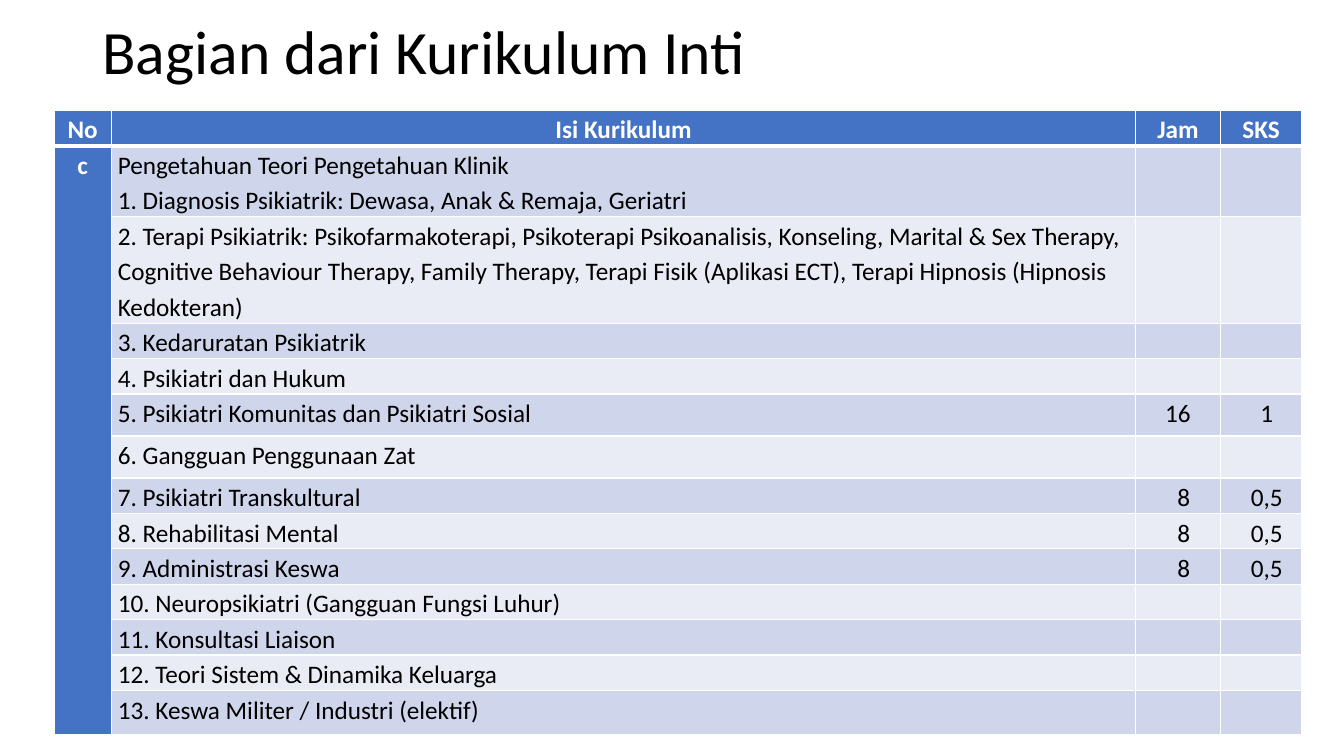
from lxml.etree import SubElement
from pptx import Presentation
from pptx.dml.color import RGBColor
from pptx.enum.text import MSO_ANCHOR, MSO_AUTO_SIZE, PP_ALIGN as Align
from pptx.oxml.ns import qn
from pptx.util import Cm, Pt

TITLE = "Bagian dari Kurikulum Inti"
HEADERS = ["No", "Isi Kurikulum", "Jam", "SKS"]
SECTION = "c"
# Topic, hours, credits, row height in cm
TOPICS = [
    ("Pengetahuan Teori Pengetahuan Klinik\n"
     "1. Diagnosis Psikiatrik: Dewasa, Anak & Remaja, Geriatri", "", "", 1.79),
    ("2. Terapi Psikiatrik: Psikofarmakoterapi, Psikoterapi Psikoanalisis, "
     "Konseling, Marital & Sex Therapy, Cognitive Behaviour Therapy, "
     "Family Therapy, Terapi Fisik (Aplikasi ECT), Terapi Hipnosis "
     "(Hipnosis Kedokteran)", "", "", 2.68),
    ("3. Kedaruratan Psikiatrik", "", "", 0.89),
    ("4. Psikiatri dan Hukum", "", "", 0.89),
    ("5. Psikiatri Komunitas dan Psikiatri Sosial", "16", "1", 1.06),
    ("6. Gangguan Penggunaan Zat", "", "", 1.06),
    ("7. Psikiatri Transkultural", "8", "0,5", 0.89),
    ("8. Rehabilitasi Mental", "8", "0,5", 0.89),
    ("9. Administrasi Keswa", "8", "0,5", 0.89),
    ("10. Neuropsikiatri (Gangguan Fungsi Luhur)", "", "", 0.89),
    ("11. Konsultasi Liaison", "", "", 0.89),
    ("12. Teori Sistem & Dinamika Keluarga", "", "", 0.89),
    ("13. Keswa Militer / Industri (elektif)", "", "", 1.11),
]
COLUMN_WIDTHS = [1.45, 25.81, 2.13, 2.06]
HEADER_HEIGHT = 0.89
FONT = "Calibri"
BLUE, DARK_BAND, LIGHT_BAND = "4472C4", "CFD5EA", "E9EBF5"
WHITE, BLACK = "FFFFFF", "000000"
INSET, NUMBER_INDENT = 0.16, 0.29


def color(value):
    return RGBColor.from_string(value)


def write(frame, text, size=18, ink=BLACK, bold=False, align=Align.LEFT,
          spacing=1.15):
    for index, line in enumerate(text.split("\n")):
        para = frame.paragraphs[0] if index == 0 else frame.add_paragraph()
        para.alignment = align
        para.line_spacing = spacing
        span = para.add_run()
        span.text = line
        span.font.name = FONT
        span.font.size = Pt(size)
        span.font.bold = bold
        span.font.color.rgb = color(ink)


def draw_borders(cell, top=1, bottom=1):
    properties = cell._tc.get_or_add_tcPr()
    widths = {"a:lnL": 1, "a:lnR": 1, "a:lnT": top, "a:lnB": bottom}
    for tag, width in widths.items():
        line = SubElement(properties, qn(tag), w=str(Pt(width)))
        fill = SubElement(line, qn("a:solidFill"))
        SubElement(fill, qn("a:srgbClr"), val=WHITE)


def style_cell(cell, fill, text="", indent=0, top=1, bottom=1, **text_format):
    draw_borders(cell, top, bottom)
    cell.fill.solid()
    cell.fill.fore_color.rgb = color(fill)
    cell.margin_left = Cm(INSET + indent)
    cell.margin_right = Cm(INSET)
    cell.margin_top = cell.margin_bottom = 0
    if text:
        write(cell.text_frame, text, **text_format)


def add_title(page):
    title = page.shapes.title
    title.left, title.top = Cm(2.33), Cm(0)
    title.width, title.height = Cm(29.21), Cm(2.76)
    frame = title.text_frame
    frame.auto_size = MSO_AUTO_SIZE.NONE
    frame.vertical_anchor = MSO_ANCHOR.MIDDLE
    write(frame, TITLE, size=44, spacing=0.9)


def add_curriculum(page):
    heights = [HEADER_HEIGHT] + [topic[-1] for topic in TOPICS]
    table = page.shapes.add_table(
        len(heights), len(HEADERS), Cm(1.36), Cm(2.78),
        Cm(sum(COLUMN_WIDTHS)), Cm(sum(heights))).table
    for column, width in zip(table.columns, COLUMN_WIDTHS):
        column.width = Cm(width)
    for row, height in zip(table.rows, heights):
        row.height = Cm(height)

    heading = {"ink": WHITE, "bold": True, "align": Align.CENTER}
    for column, header in enumerate(HEADERS):
        style_cell(table.cell(0, column), BLUE, header, bottom=3, **heading)

    table.cell(1, 0).merge(table.cell(len(TOPICS), 0))
    for row, (topic, hours, credits, _) in enumerate(TOPICS, start=1):
        top = 3 if row == 1 else 1
        band = DARK_BAND if row % 2 else LIGHT_BAND
        style_cell(table.cell(row, 0), BLUE, SECTION if row == 1 else "",
                   top=top, **heading)
        style_cell(table.cell(row, 1), band, topic, top=top)
        for column, number in ((2, hours), (3, credits)):
            indent = 0 if len(number) == 2 else NUMBER_INDENT
            style_cell(table.cell(row, column), band, number, indent=indent,
                       top=top, align=Align.CENTER)


def main():
    deck = Presentation()
    deck.slide_width, deck.slide_height = Cm(33.87), Cm(19.05)
    page = deck.slides.add_slide(deck.slide_layouts[5])
    page.background.fill.solid()
    page.background.fill.fore_color.rgb = color(WHITE)
    add_title(page)
    add_curriculum(page)
    deck.save("out.pptx")


if __name__ == "__main__":
    main()
